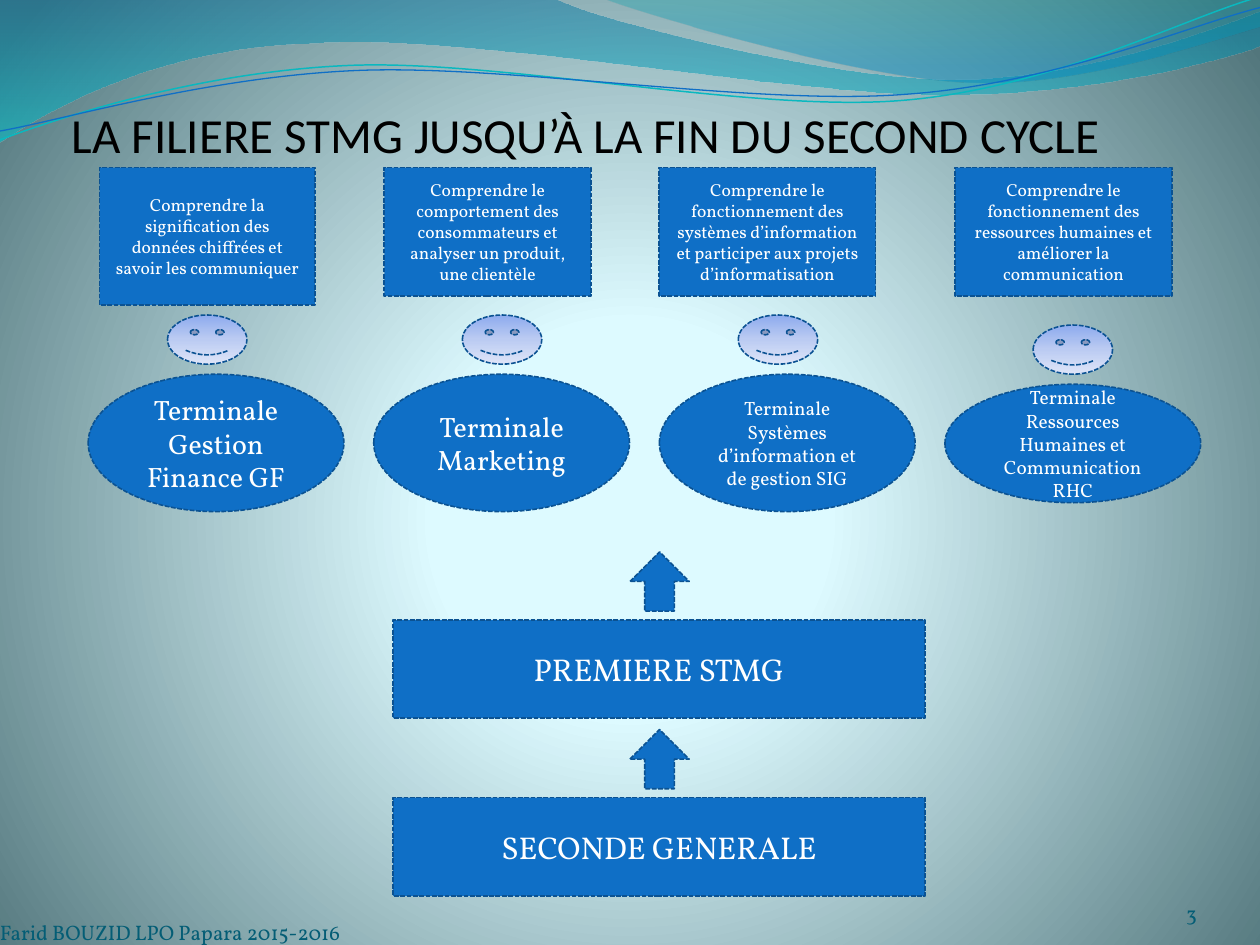
from dataclasses import dataclass

from lxml.etree import SubElement
from pptx import Presentation
from pptx.dml.color import RGBColor
from pptx.enum.dml import MSO_LINE
from pptx.enum.shapes import MSO_SHAPE
from pptx.enum.text import MSO_ANCHOR, PP_ALIGN
from pptx.oxml.ns import qn
from pptx.util import Inches, Pt


@dataclass(frozen=True)
class Theme:
    body_font: str = "Vollkorn"
    title_font: str = "Calibri"
    blue: str = "0F6FC6"
    outline: str = "0B5292"
    cyan: str = "0AB8BF"
    white: str = "FFFFFF"
    black: str = "000000"
    footer: str = "045D75"
    # Gradient stops: position %, colour, opacity %
    backdrop: tuple = ((0, "DEFBFF", 100), (25, "DDFAFF", 100), (100, "52767C", 100))
    left_wave: tuple = ((0, "0074A1", 45), (100, "00C6CF", 55))
    right_wave: tuple = ((0, "00A1A9", 30), (80, "008BBF", 45))
    face: tuple = ((0, "8EABEE", 100), (50, "BBCBF2", 100), (100, "DEE5F8", 100))
    title_size: float = 28
    stage_size: float = 18
    course_size: float = 16
    long_course_size: float = 11
    skill_size: float = 10
    footer_size: float = 12


def set_gradient(fill, owner, stops, focus=None):
    """Fill top to bottom, or in circles around the focus rectangle (l, t, r, b in %)."""
    fill.gradient()
    gradient = owner.find(".//" + qn("a:gradFill"))
    for child in list(gradient):
        gradient.remove(child)
    stop_list = SubElement(gradient, qn("a:gsLst"))
    for position, colour, opacity in stops:
        stop = SubElement(stop_list, qn("a:gs"), pos=str(position * 1000))
        rgb = SubElement(stop, qn("a:srgbClr"), val=colour)
        if opacity < 100:
            SubElement(rgb, qn("a:alpha"), val=str(opacity * 1000))
    if focus:
        circle = SubElement(gradient, qn("a:path"))
        circle.set("path", "circle")
        sides = {side: str(share * 1000) for side, share in zip("ltrb", focus)}
        SubElement(circle, qn("a:fillToRect"), **sides)
    else:
        SubElement(gradient, qn("a:lin"), ang="5400000", scaled="1")


def bend(outline, segments):
    """Turn each line of the outline whose segment has six numbers into a cubic curve."""
    lines = outline._element.findall(".//" + qn("a:lnTo"))
    for line, segment in zip(lines, segments):
        if len(segment) == 2:
            continue
        line.tag = qn("a:cubicBezTo")
        line.remove(line[0])
        for x, y in zip(segment[::2], segment[1::2]):
            SubElement(line, qn("a:pt"), x=str(Inches(x) - outline.left),
                       y=str(Inches(y) - outline.top))


class SlideBuilder:
    def __init__(self, slide, theme):
        self.slide = slide
        self.theme = theme

    def background(self, stops, focus):
        set_gradient(self.slide.background.fill, self.slide._element, stops, focus)

    def _outline(self, start, segments, closed):
        builder = self.slide.shapes.build_freeform(*map(Inches, start))
        ends = [tuple(map(Inches, segment[-2:])) for segment in segments]
        builder.add_line_segments(ends, close=closed)
        outline = builder.convert_to_shape()
        bend(outline, segments)
        outline.shadow.inherit = False
        return outline

    def wave(self, start, segments, stops):
        wave = self._outline(start, segments, closed=True)
        set_gradient(wave.fill, wave._element, stops)
        wave.line.fill.background()

    def curve(self, start, segments, colour, weight):
        curve = self._outline(start, segments, closed=False)
        curve.fill.background()
        curve.line.color.rgb = RGBColor.from_string(colour)
        curve.line.width = Pt(weight)

    def _write(self, frame, text, size, colour, font, align):
        frame.word_wrap = True
        paragraph = frame.paragraphs[0]
        paragraph.alignment = align
        run = paragraph.add_run()
        run.text = text
        run.font.size = Pt(size)
        run.font.name = font
        run.font.color.rgb = RGBColor.from_string(colour)
        return paragraph

    def title(self, text, left, top, width, height):
        box = self.slide.shapes.add_textbox(*map(Inches, (left, top, width, height)))
        paragraph = self._write(box.text_frame, text, self.theme.title_size,
                                self.theme.black, self.theme.title_font, PP_ALIGN.LEFT)
        properties = paragraph._p.get_or_add_pPr()
        properties.set("marL", str(Inches(0.3)))
        properties.set("indent", str(Inches(-0.3)))

    def footer(self, text, left, top, width, height, align):
        box = self.slide.shapes.add_textbox(*map(Inches, (left, top, width, height)))
        frame = box.text_frame
        frame.margin_left = frame.margin_right = frame.margin_top = frame.margin_bottom = 0
        frame.vertical_anchor = MSO_ANCHOR.BOTTOM
        self._write(frame, text, self.theme.footer_size, self.theme.footer,
                    self.theme.body_font, align)

    def block(self, kind, left, top, width, height, text="", size=None, stops=None):
        block = self.slide.shapes.add_shape(kind, *map(Inches, (left, top, width, height)))
        block.shadow.inherit = False
        if stops:
            set_gradient(block.fill, block._element, stops)
        else:
            block.fill.solid()
            block.fill.fore_color.rgb = RGBColor.from_string(self.theme.blue)
        block.line.color.rgb = RGBColor.from_string(self.theme.outline)
        block.line.width = Pt(0.9)
        block.line.dash_style = MSO_LINE.SQUARE_DOT
        if text:
            block.text_frame.vertical_anchor = MSO_ANCHOR.MIDDLE
            self._write(block.text_frame, text, size, self.theme.white,
                        self.theme.body_font, PP_ALIGN.CENTER)


def draw_decor(page, theme):
    page.background(theme.backdrop, focus=(10, 110, 10, 100))
    page.wave((0, 0), [(4.4, -0.01), (4.76, 0.17, 6.64, 0.63, 7.58, 0.63),
                       (8.53, 0.63, 9.58, 0.26, 10, 0.09), (10.01, 0.36),
                       (9.83, 0.44, 8.7, 0.76, 7.46, 0.75),
                       (6.22, 0.75, 3.82, 0.28, 2.57, 0.34),
                       (1.29, 0.36, 0.46, 0.83, -0.01, 1.13)], theme.left_wave)
    page.wave((4.79, -0.01), [(5.09, 0.11, 6.82, 0.62, 7.69, 0.65),
                              (8.56, 0.69, 9.61, 0.32, 10, 0.21), (10, 0)],
              theme.right_wave)
    page.curve((0, 1.11), [(0.48, 0.93, 1.58, 0.57, 2.77, 0.52),
                           (3.95, 0.47, 5.93, 0.89, 7.13, 0.8),
                           (8.33, 0.71, 9.38, 0.15, 9.98, -0.02)], theme.cyan, 0.85)
    page.curve((0, 1.04), [(0.47, 0.96, 1.64, 0.61, 2.83, 0.56),
                           (4.03, 0.51, 5.97, 0.84, 7.17, 0.75),
                           (8.36, 0.67, 9.41, 0.21, 10, 0.06)], theme.blue, 0.75)


def main():
    theme = Theme()
    deck = Presentation()
    deck.slide_width, deck.slide_height = Inches(10), Inches(7.5)
    page = SlideBuilder(deck.slides.add_slide(deck.slide_layouts[6]), theme)

    draw_decor(page, theme)
    page.title("LA FILIERE STMG JUSQU’À LA FIN DU SECOND CYCLE", 0.47, 0.78, 9, 3.02)
    page.footer("3", 8.67, 6.95, 0.83, 0.4, PP_ALIGN.RIGHT)
    page.footer("Farid BOUZID LPO Papara 2015-2016", 0, 7.1, 3.67, 0.4, PP_ALIGN.LEFT)

    for stage, top in (("SECONDE GENERALE", 6.33), ("PREMIERE STMG", 4.92)):
        page.block(MSO_SHAPE.RECTANGLE, 3.12, top, 4.22, 0.78, stage, theme.stage_size)
        page.block(MSO_SHAPE.UP_ARROW, 5, top - 0.54, 0.47, 0.47)

    # Course, type size, top, height; face left; skill, left, width, height
    tracks = [
        ("Terminale Gestion Finance GF", theme.course_size, 2.97, 1.09, 1.33,
         "Comprendre la signification des données chiffrées et savoir les communiquer",
         0.79, 1.71, 1.09),
        ("Terminale Marketing", theme.course_size, 2.97, 1.09, 3.67,
         "Comprendre le comportement des consommateurs et analyser un produit, une clientèle",
         3.05, 1.64, 1.02),
        ("Terminale Systèmes d’information et de gestion SIG", theme.long_course_size,
         2.97, 1.09, 5.86, "Comprendre le fonctionnement des systèmes d’information "
         "et participer aux projets d’informatisation", 5.23, 1.72, 1.02),
        ("Terminale Ressources Humaines et Communication RHC", theme.long_course_size,
         3.05, 0.94, 8.2, "Comprendre le fonctionnement des ressources humaines "
         "et améliorer la communication", 7.58, 1.72, 1.02),
    ]
    first_left, last_left = 0.7, 7.5
    pitch = (last_left - first_left) / (len(tracks) - 1)
    for index, (course, size, top, height, face_left,
                skill, skill_left, skill_width, skill_height) in enumerate(tracks):
        page.block(MSO_SHAPE.OVAL, first_left + pitch * index, top, 2.03, height,
                   course, size)
        page.block(MSO_SHAPE.SMILEY_FACE, face_left, top - 0.47, 0.63, 0.39,
                   stops=theme.face)
        page.block(MSO_SHAPE.RECTANGLE, skill_left, 1.33, skill_width, skill_height,
                   skill, theme.skill_size)

    deck.save("out.pptx")


if __name__ == "__main__":
    main()
